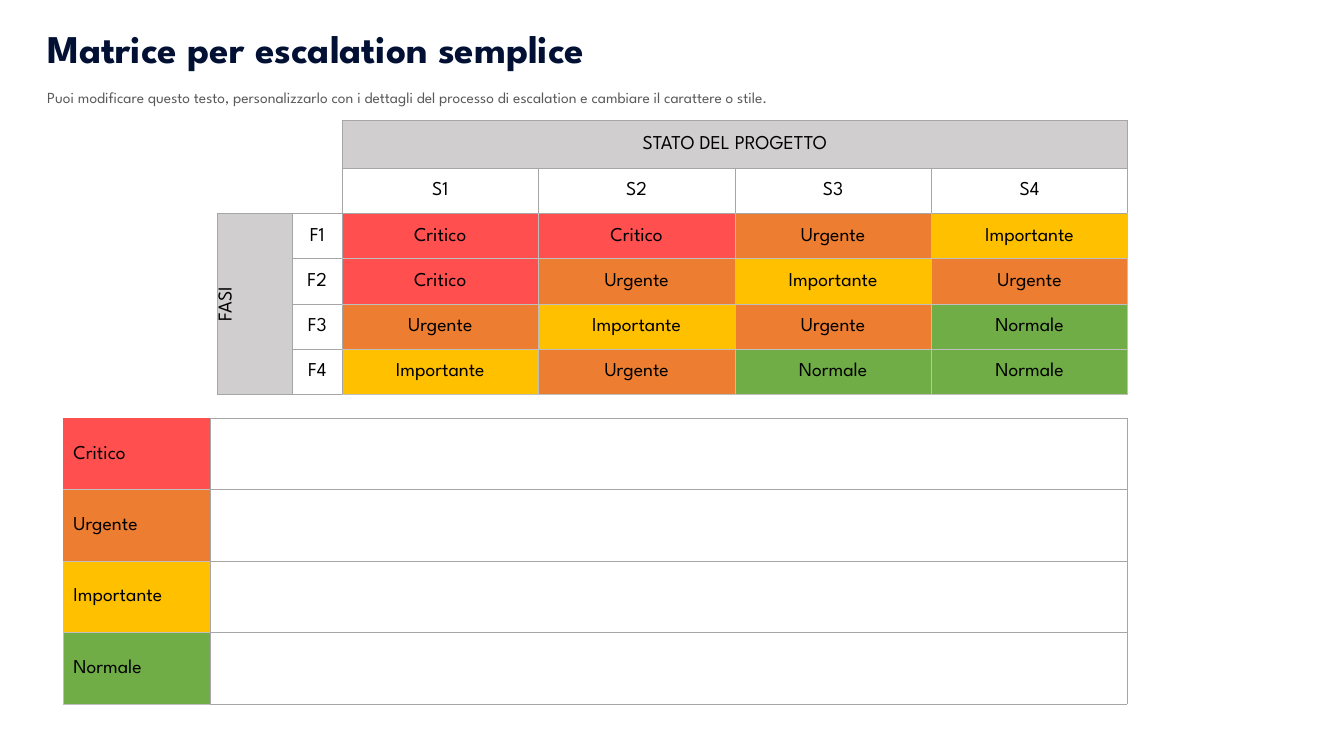
from lxml.etree import SubElement
from pptx import Presentation
from pptx.dml.color import RGBColor
from pptx.enum.text import MSO_ANCHOR, PP_ALIGN
from pptx.oxml.ns import qn
from pptx.util import Cm, Pt

FONT = "League Spartan"
NAVY = RGBColor(0x01, 0x10, 0x33)
SLATE = RGBColor(0x59, 0x59, 0x59)
BLACK = RGBColor(0, 0, 0)
WHITE = RGBColor(0xFF, 0xFF, 0xFF)
HEAD = RGBColor(0xD0, 0xCE, 0xCE)
GRAY = RGBColor(0xA6, 0xA6, 0xA6)
LIGHT = RGBColor(0xBF, 0xBF, 0xBF)

TITLE = "Matrice per escalation semplice"
NOTE = ("Puoi modificare questo testo, personalizzarlo con i dettagli del "
        "processo di escalation e cambiare il carattere o stile.")
LEVELS = {
    "Critico": RGBColor(0xFF, 0x4F, 0x4F),
    "Urgente": RGBColor(0xED, 0x7D, 0x31),
    "Importante": RGBColor(0xFF, 0xC0, 0x00),
    "Normale": RGBColor(0x70, 0xAD, 0x47),
}
MATRIX = [
    ["", "", "STATO DEL PROGETTO", "", "", ""],
    ["", "", "S1", "S2", "S3", "S4"],
    ["FASI", "F1", "Critico", "Critico", "Urgente", "Importante"],
    ["", "F2", "Critico", "Urgente", "Importante", "Urgente"],
    ["", "F3", "Urgente", "Importante", "Urgente", "Normale"],
    ["", "F4", "Importante", "Urgente", "Normale", "Normale"],
]
LEGEND = [[name, ""] for name in LEVELS]


def style(frame, size, color, bold=False, align=PP_ALIGN.LEFT):
    para = frame.paragraphs[0]
    para.alignment = align
    for run in para.runs:
        run.font.name = FONT
        run.font.size = Pt(size)
        run.font.bold = bold
        run.font.color.rgb = color


def add_text(slide, text, box, inset, size, color, bold=False):
    frame = slide.shapes.add_textbox(*map(Cm, box)).text_frame
    frame.word_wrap = True
    frame.margin_top = Cm(inset)
    frame.text = text
    style(frame, size, color, bold)


def set_edges(cell, edges):
    props = cell._tc.get_or_add_tcPr()
    for side in "LRTB":
        line = SubElement(props, qn("a:ln" + side), w=str(Pt(0.5)))
        color = edges.get(side)
        if color is None:
            SubElement(line, qn("a:noFill"))
        else:
            fill = SubElement(line, qn("a:solidFill"))
            SubElement(fill, qn("a:srgbClr"), val=str(color))


def add_grid(slide, rows, spot, widths, heights, edges, align, inset):
    shape = slide.shapes.add_table(
        len(rows), len(widths), *map(Cm, spot), Cm(sum(widths)), Cm(sum(heights)))
    table = shape.table
    table.first_row = table.horz_banding = False
    for col, width in zip(table.columns, widths):
        col.width = Cm(width)
    for row, height in zip(table.rows, heights):
        row.height = Cm(height)
    for r, row in enumerate(rows):
        for c, text in enumerate(row):
            cell = table.cell(r, c)
            set_edges(cell, edges(r, c))
            cell.fill.solid()
            cell.fill.fore_color.rgb = LEVELS.get(text, WHITE)
            cell.vertical_anchor = MSO_ANCHOR.MIDDLE
            cell.margin_left = Cm(inset)
            cell.margin_right = cell.margin_top = Cm(0.02)
            cell.margin_bottom = 0
            if text:
                cell.text_frame.text = text
                style(cell.text_frame, 14, BLACK, align=align)
    return table


def matrix_edges(r, c):
    if r < 2 and c < 2:
        return {"R": GRAY if c == 1 else None, "B": GRAY if r == 1 else None}
    if r < 2 or c < 2:
        return dict.fromkeys("LRTB", GRAY)
    return {"L": GRAY if c == 2 else LIGHT, "T": GRAY if r == 2 else LIGHT,
            "R": LIGHT, "B": LIGHT}


def legend_edges(r, c):
    if c == 1:
        return dict.fromkeys("LRTB", GRAY)
    return {"L": LIGHT if r > 1 else None, "T": LIGHT if r else None,
            "R": GRAY, "B": LIGHT}


def main():
    deck = Presentation()
    deck.slide_width, deck.slide_height = Cm(33.87), Cm(19.05)
    slide = deck.slides.add_slide(deck.slide_layouts[6])

    add_text(slide, TITLE, (0.94, 0.48, 24.59, 1.45), 0.13, 28, NAVY, True)
    add_text(slide, NOTE, (0.94, 1.78, 28.85, 1.02), 0.44, 11, SLATE)

    matrix = add_grid(slide, MATRIX, (5.47, 3.03), [1.9, 1.25] + [4.95] * 4,
                      [1.21] + [1.14] * 5, matrix_edges, PP_ALIGN.CENTER, 0.02)
    state, phase = matrix.cell(0, 2), matrix.cell(2, 0)
    state.merge(matrix.cell(0, 5))
    phase.merge(matrix.cell(5, 0))
    for cell in (state, phase):
        cell.fill.fore_color.rgb = HEAD
    phase._tc.get_or_add_tcPr().set("vert", "vert270")

    add_grid(slide, LEGEND, (1.6, 10.54), [3.69, 23.11], [1.8] * len(LEGEND),
             legend_edges, PP_ALIGN.LEFT, 0.25)
    deck.save("out.pptx")


if __name__ == "__main__":
    main()
